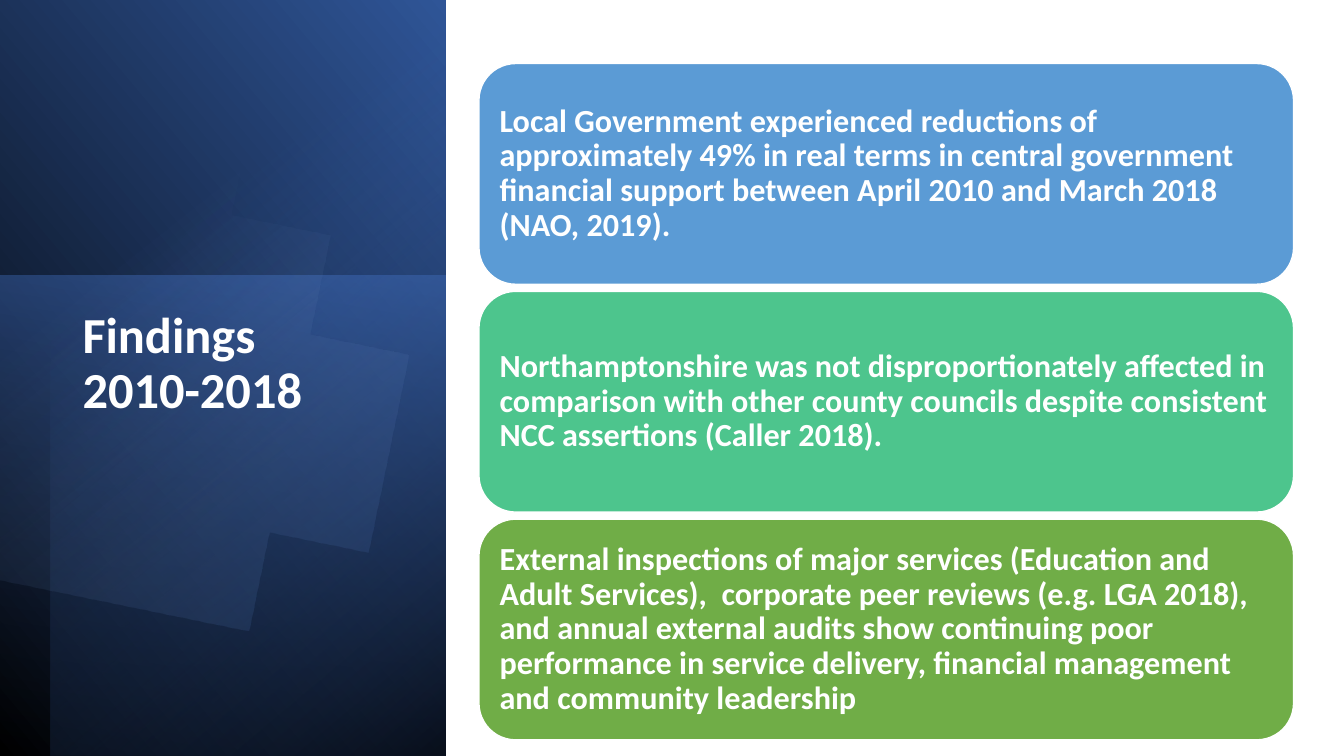
import math
from lxml import etree
from pptx import Presentation
from pptx import util as u
from pptx.dml.color import RGBColor
from pptx.enum import shapes, text
from pptx.oxml import ns

WIDE, HIGH = 13.33, 7.5
FONT = "Calibri"
SIDE = (0, 0, 4.42, HIGH)
MAIN = (4.75, 0.63, 8.08, 6.71)
GAP = 0.07
CARDS = [
    ("5B9BD5", "Local Government experienced reductions of approximately 49% in real "
     "terms in central government financial support between April 2010 and March "
     "2018 (NAO, 2019)."),
    ("4DC58D", "Northamptonshire was not disproportionately affected in comparison "
     "with other county councils despite consistent NCC assertions (Caller 2018)."),
    ("70AD47", "External inspections of major services (Education and Adult Services),  "
     "corporate peer reviews (e.g. LGA 2018), and annual external audits show "
     "continuing poor performance in service delivery, financial management and "
     "community leadership"),
]


def color(code):
    return RGBColor.from_string(code)


def place(box):
    return [u.Inches(v) for v in box]


def fade(shape, stops, angle):
    """Fill with a linear gradient; stops are (position, colour, opacity)."""
    shape.shadow.inherit = False
    shape.line.fill.background()
    shape.fill.gradient()
    grad = shape.element.spPr.find(ns.qn("a:gradFill"))
    grad.clear()
    grad.set("rotWithShape", "1")
    gs_list = etree.SubElement(grad, ns.qn("a:gsLst"))
    for pos, code, alpha in stops:
        stop = etree.SubElement(gs_list, ns.qn("a:gs"), pos=str(pos * 1000))
        tone = etree.SubElement(stop, ns.qn("a:srgbClr"), val=code)
        if alpha < 100:
            etree.SubElement(tone, ns.qn("a:alpha"), val=str(alpha * 1000))
    etree.SubElement(grad, ns.qn("a:lin"), ang=str(angle * 60000), scaled="0")


def panel(slide, box, turn, flip, stops, angle):
    """Draw a quarter-turned rectangle that covers the given box."""
    x, y, w, h = box
    shift = (w - h) / 2
    rect = slide.shapes.add_shape(shapes.MSO_SHAPE.RECTANGLE,
                                  *place((x + shift, y - shift, h, w)))
    rect.rotation = turn
    if flip:
        rect.element.spPr.find(ns.qn("a:xfrm")).set("flipH", "1")
    fade(rect, stops, angle)


def disc(slide, box):
    """Draw a turned circle, cut off at the left edge of the box."""
    x, y, _, h = box
    rad, turn = 2.63, 101.6
    cx, cy = x + 1.43, y + h * 0.463
    mid_x, mid_y = x + 1.81, y + 3.545
    end = math.acos((x - cx) / rad)
    cos, sin = math.cos(math.radians(turn)), math.sin(math.radians(turn))
    dots = []
    for i in range(121):
        a = end * (i / 60 - 1)
        dx = cx + rad * math.cos(a) - mid_x
        dy = cy + rad * math.sin(a) - mid_y
        dots.append((mid_x + dx * cos + dy * sin, mid_y - dx * sin + dy * cos))
    form = slide.shapes.build_freeform(*dots[0], scale=u.Inches(1))
    form.add_line_segments(dots[1:], close=True)
    shape = form.convert_to_shape()
    shape.rotation = turn
    fade(shape, [(39, "8FAADC", 0), (100, "2F5597", 26)], 310)


def write(frame, lines, size):
    """Write bold white lines into one left-aligned paragraph."""
    frame.word_wrap = True
    para = frame.paragraphs[0]
    para.alignment = text.PP_ALIGN.LEFT
    para.line_spacing = 0.9
    for i, line in enumerate(lines):
        if i:
            para.add_line_break()
        run = para.add_run()
        run.text = line
        run.font.name, run.font.size, run.font.bold = FONT, u.Pt(size), True
        run.font.color.rgb = color("FFFFFF")


def sidebar(slide, box):
    x, y, w, h = box
    # Layered gradients
    panel(slide, box, 90, True, [(0, "000000", 100), (100, "2F5597", 100)], 310)
    low = h * 0.635
    panel(slide, (x, y + h - low, w, low), 270, False,
          [(0, "4472C4", 50), (100, "203864", 0)], 190)
    inset = 0.5
    panel(slide, (x + inset, y, w - inset, h), 270, True,
          [(0, "000000", 59), (69, "4472C4", 0)], 220)
    disc(slide, box)
    # Title
    title = slide.shapes.add_textbox(*place((x + 0.72, y + 3.03, 2.49, 3.36)))
    write(title.text_frame, ["Findings", "2010-2018"], 36)


def cards(slide, box):
    x, y, w, h = box
    tall = (h - GAP * (len(CARDS) - 1)) / len(CARDS)
    for i, (code, words) in enumerate(CARDS):
        card = slide.shapes.add_shape(shapes.MSO_SHAPE.ROUNDED_RECTANGLE,
                                      *place((x, y + i * (tall + GAP), w, tall)))
        card.shadow.inherit = False
        card.fill.solid()
        card.fill.fore_color.rgb = color(code)
        card.line.color.rgb = color("FFFFFF")
        card.line.width = u.Pt(1)
        frame = card.text_frame
        frame.vertical_anchor = text.MSO_ANCHOR.MIDDLE
        frame.margin_left = frame.margin_right = u.Inches(0.1)
        frame.margin_top = frame.margin_bottom = u.Inches(0.1)
        write(frame, [words], 23)


def main():
    deck = Presentation()
    deck.slide_width, deck.slide_height = u.Inches(WIDE), u.Inches(HIGH)
    slide = deck.slides.add_slide(deck.slide_layouts[6])
    sidebar(slide, SIDE)
    cards(slide, MAIN)
    deck.save("out.pptx")


if __name__ == "__main__":
    main()
